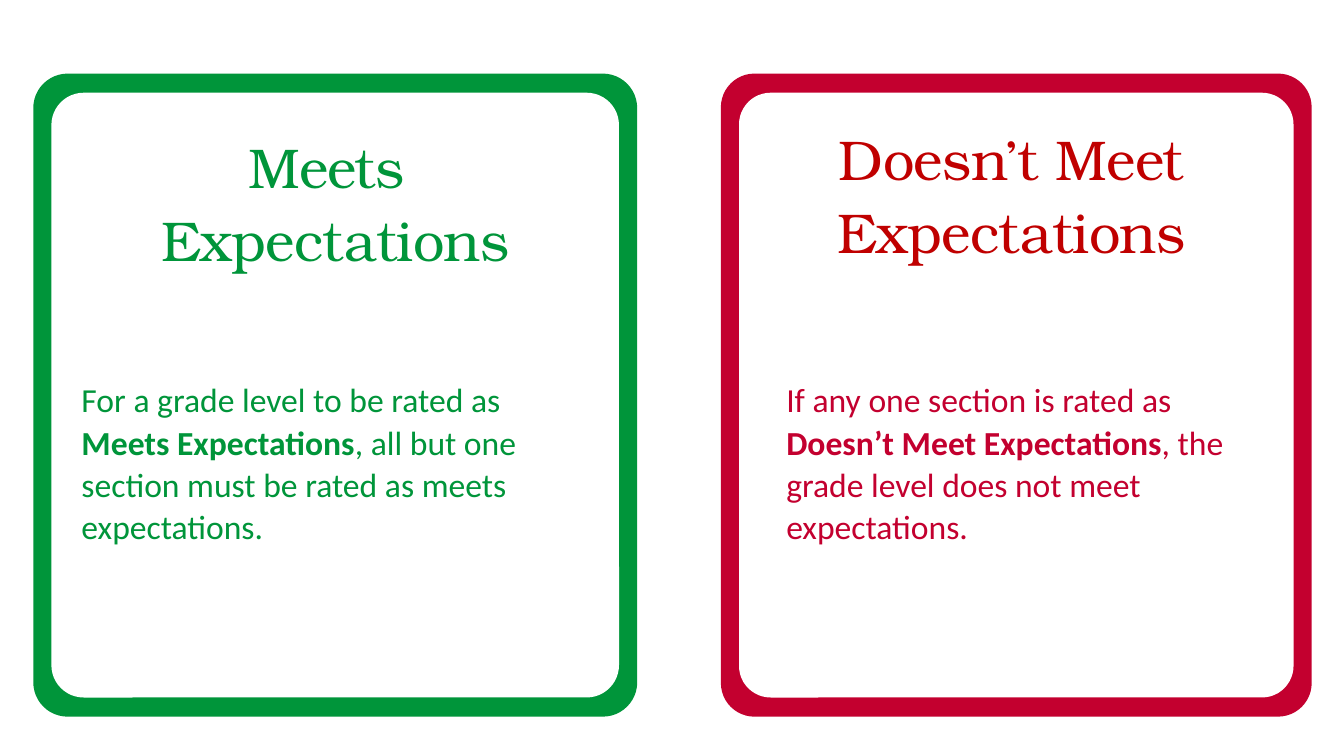
import pptx
import pptx.dml.color
import pptx.enum.shapes
import pptx.enum.text
import pptx.util

GREEN = pptx.dml.color.RGBColor(0x00, 0x95, 0x3A)
CRIMSON = pptx.dml.color.RGBColor(0xC3, 0x00, 0x2F)
RED = pptx.dml.color.RGBColor(0xC0, 0x00, 0x00)
WHITE = pptx.dml.color.RGBColor(0xFF, 0xFF, 0xFF)

ROWS = 75
CARD_TOP, CARD_HEIGHT = 7.3, 63.8
BORDER_COLUMNS, BORDER_ROWS = 1.8, 1.9
CORNER = 0.057
HEADING_HEIGHT = 15.2
BODY_TOP, BODY_HEIGHT = 36.9, 17.7

CARDS = [
    {
        "left": 3.3, "width": 59.9, "color": GREEN,
        "heading": ["Meets ", "Expectations"], "heading_color": GREEN,
        "heading_box": (5.1, 12.1, 56.3, HEADING_HEIGHT),
        "body": [
            ("For a grade level to be rated as ", False),
            ("Meets Expectations", True),
            (", all but one section must be rated as meets expectations.", False),
        ],
        "body_box": (7.1, BODY_TOP, 52.1, BODY_HEIGHT),
    },
    {
        "left": 71.5, "width": 58.6, "color": CRIMSON,
        "heading": ["Doesn’t Meet", "Expectations"], "heading_color": RED,
        "heading_box": (72.8, 11.3, 55, HEADING_HEIGHT),
        "body": [
            ("If any one section is rated as ", False),
            ("Doesn’t Meet Expectations", True),
            (", the grade level does not meet expectations.", False),
        ],
        "body_box": (77, BODY_TOP, 50.9, BODY_HEIGHT),
    },
]


class CardSlide:
    heading_style = {"name": "TeX Gyre Bonum", "size": pptx.util.Pt(40), "bold": False}
    body_style = {"name": "Calibri", "size": pptx.util.Pt(24)}
    heading_format = {
        "alignment": pptx.enum.text.PP_ALIGN.CENTER,
        "line_spacing": pptx.util.Pt(52),
    }
    body_format = {
        "alignment": pptx.enum.text.PP_ALIGN.LEFT,
        "line_spacing": pptx.util.Pt(30.3),
    }

    def __init__(self, presentation):
        self.slide = presentation.slides.add_slide(presentation.slide_layouts[6])
        self.unit = presentation.slide_height / ROWS

    def place(self, box):
        return [round(length * self.unit) for length in box]

    def apply(self, target, values):
        for name, value in values.items():
            setattr(target, name, value)

    def panel(self, box, color):
        shape = self.slide.shapes.add_shape(
            pptx.enum.shapes.MSO_SHAPE.ROUNDED_RECTANGLE, *self.place(box)
        )
        shape.adjustments[0] = CORNER
        shape.shadow.inherit = False
        shape.fill.solid()
        shape.fill.fore_color.rgb = color
        shape.line.fill.background()

    def frame(self, left, width, color):
        self.panel((left, CARD_TOP, width, CARD_HEIGHT), color)
        inner = (
            left + BORDER_COLUMNS,
            CARD_TOP + BORDER_ROWS,
            width - 2 * BORDER_COLUMNS,
            CARD_HEIGHT - 2 * BORDER_ROWS,
        )
        self.panel(inner, WHITE)

    def text_frame(self, box):
        text_frame = self.slide.shapes.add_textbox(*self.place(box)).text_frame
        text_frame.word_wrap = True
        return text_frame

    def run(self, paragraph, text, style, color):
        run = paragraph.add_run()
        run.text = text
        self.apply(run.font, style)
        run.font.color.rgb = color
        return run

    def heading(self, box, lines, color):
        text_frame = self.text_frame(box)
        for index, line in enumerate(lines):
            paragraph = text_frame.add_paragraph() if index else text_frame.paragraphs[0]
            self.apply(paragraph, self.heading_format)
            run = self.run(paragraph, line, self.heading_style, color)
            run._r.get_or_add_rPr().set("spc", "-40")

    def body(self, box, parts, color):
        paragraph = self.text_frame(box).paragraphs[0]
        self.apply(paragraph, self.body_format)
        for text, bold in parts:
            self.run(paragraph, text, {**self.body_style, "bold": bold}, color)


def main():
    presentation = pptx.Presentation()
    presentation.slide_width = pptx.util.Inches(13.33)
    presentation.slide_height = pptx.util.Inches(7.5)
    card_slide = CardSlide(presentation)
    for card in CARDS:
        card_slide.frame(card["left"], card["width"], card["color"])
        card_slide.heading(card["heading_box"], card["heading"], card["heading_color"])
        card_slide.body(card["body_box"], card["body"], card["color"])
    presentation.save("out.pptx")


if __name__ == "__main__":
    main()
